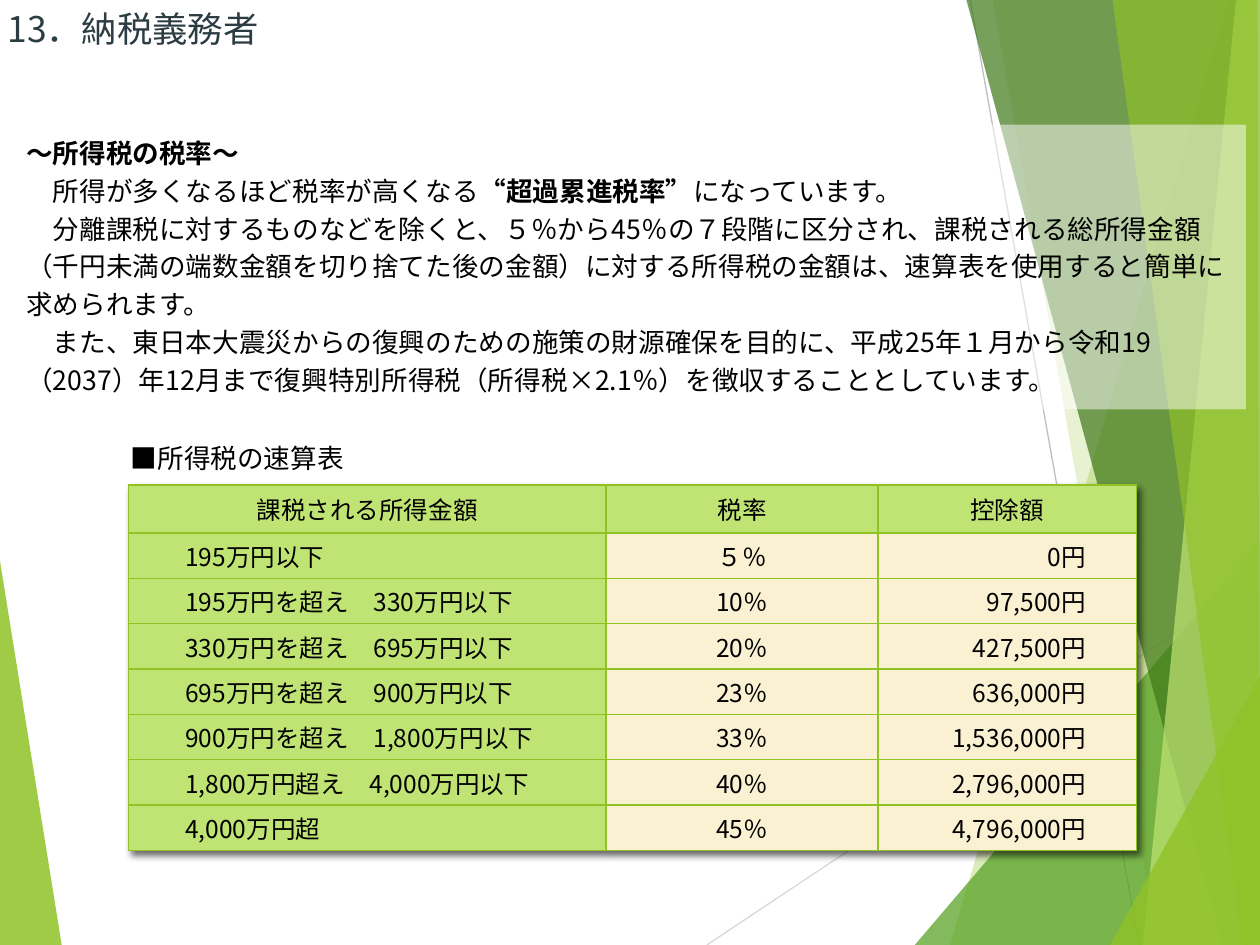
from pptx import Presentation
from pptx.dml.color import RGBColor
from pptx.enum.shapes import MSO_CONNECTOR as Link, MSO_SHAPE as Shape
from pptx.enum.text import MSO_ANCHOR as Anchor, PP_ALIGN as Align
from pptx.oxml import parse_xml
from pptx.oxml.ns import nsdecls, qn
from pptx.util import Inches, Pt
from lxml.etree import SubElement

FONT = "Noto Sans CJK JP"
GREEN, LIME, CREAM = "90C226", "C0E474", "FAF1D2"

# fill, opacity in percent, corners in inches
FACETS = [
    (GREEN, 30, [(9.75, 0), (7.54, 7.5), (10.02, 7.5), (10.01, 0)]),
    (GREEN, 20, [(7.88, 0), (9.19, 7.5), (10.01, 7.5), (10.01, 0)]),
    ("54A021", 72, [(7.26, 7.5), (10, 4.29), (10.01, 7.5)]),
    ("3F7819", 70, [(7.67, 0), (9.7, 7.5), (10.01, 7.5), (10.01, 0)]),
    (LIME, 70, [(9.81, 0), (9.07, 7.5), (10.01, 7.5), (10, 0)]),
    (GREEN, 65, [(8.83, 0), (9.86, 7.5), (10, 7.5), (9.98, 0)]),
    (GREEN, 80, [(8.81, 7.5), (10.01, 5.35), (10.01, 7.5)]),
]
LEFT_FACET = (GREEN, 85, [(-0.01, 4.39), (0.49, 7.5), (-0.01, 7.5)])

# paragraphs of (text, bold) runs
BODY = [
    [("～所得税の税率～", True)],
    [("　所得が多くなるほど税率が高くなる", False), ("“超過累進税率”", True),
     ("になっています。", False)],
    [("　分離課税に対するものなどを除くと、５％から45％の７段階に区分され、"
      "課税される総所得金額（千円未満の端数金額を切り捨てた後の金額）に対する"
      "所得税の金額は、速算表を使用すると簡単に求められます。", False)],
    [("　また、東日本大震災からの復興のための施策の財源確保を目的に、"
      "平成25年１月から令和19（2037）年12月まで復興特別所得税"
      "（所得税×2.1％）を徴収することとしています。", False)],
]
CAPTION = [[("■所得税の速算表", False)]]

RATES = [
    ("課税される所得金額", "税率", "控除額"),
    ("195万円以下", "５％", "0円"),
    ("195万円を超え　330万円以下", "10％", "97,500円"),
    ("330万円を超え　695万円以下", "20％", "427,500円"),
    ("695万円を超え　900万円以下", "23％", "636,000円"),
    ("900万円を超え　1,800万円以下", "33％", "1,536,000円"),
    ("1,800万円超え　4,000万円以下", "40％", "2,796,000円"),
    ("4,000万円超", "45％", "4,796,000円"),
]
WIDTHS = (3.79, 2.16, 2.05)
ALIGNS = (Align.LEFT, Align.CENTER, Align.RIGHT)
MARGINS = ((0.45, 0.06), (0.06, 0.06), (0.06, 0.4))


def rgb(code):
    return RGBColor.from_string(code)


def paint(shape, code, alpha):
    """Fill a shape without outline or shadow; alpha is opacity in percent."""
    shape.shadow.inherit = False
    shape.line.fill.background()
    shape.fill.solid()
    shape.fill.fore_color.rgb = rgb(code)
    tint = shape.fill._xPr.find(qn("a:solidFill"))[0]
    SubElement(tint, qn("a:alpha")).set("val", str(alpha * 1000))


def add_facet(slide, code, alpha, points):
    first, *rest = [(Inches(x), Inches(y)) for x, y in points]
    build = slide.shapes.build_freeform(*first)
    build.add_line_segments(rest)
    paint(build.convert_to_shape(), code, alpha)


def add_line(slide, start, end, code):
    ends = [Inches(v) for v in start + end]
    line = slide.shapes.add_connector(Link.STRAIGHT, *ends)
    line.line.color.rgb = rgb(code)
    line.line.width = Pt(0.75)
    SubElement(line._element.spPr, qn("a:effectLst"))


def add_run(para, text, size, code="000000", bold=False):
    run = para.add_run()
    run.text = text
    font = run.font
    font.size, font.bold, font.name = Pt(size), bold, FONT
    font.color.rgb = rgb(code)
    SubElement(font._element, qn("a:ea")).set("typeface", FONT)


def add_panel(slide, box, paras):
    """Half-clear white panel with left-aligned text."""
    panel = slide.shapes.add_shape(Shape.RECTANGLE, *map(Inches, box))
    paint(panel, "FFFFFF", 50)
    frame = panel.text_frame
    frame.word_wrap = True
    frame.vertical_anchor = Anchor.TOP
    for i, runs in enumerate(paras):
        para = frame.add_paragraph() if i else frame.paragraphs[0]
        para.alignment = Align.LEFT
        para.line_spacing = Pt(21.6)
        for text, bold in runs:
            add_run(para, text, 15.2, bold=bold)


def add_title(slide, text):
    box = slide.shapes.add_textbox(0, 0, Inches(4), Inches(0.45))
    frame = box.text_frame
    frame.word_wrap = True
    frame.vertical_anchor = Anchor.MIDDLE
    frame.margin_top = frame.margin_bottom = frame.margin_right = 0
    frame.margin_left = Inches(0.06)
    add_run(frame.paragraphs[0], text, 20.2, "2C3C43")


def fill_cell(cell, text, align, sides, code):
    props = cell._tc.get_or_add_tcPr()
    for side in "LRTB":
        props.append(parse_xml(
            f'<a:ln{side} {nsdecls("a")} w="12700"><a:solidFill>'
            f'<a:srgbClr val="{GREEN}"/></a:solidFill></a:ln{side}>'))
    cell.fill.solid()
    cell.fill.fore_color.rgb = rgb(code)
    cell.vertical_anchor = Anchor.MIDDLE
    cell.margin_left, cell.margin_right = map(Inches, sides)
    cell.margin_top = cell.margin_bottom = Inches(0.03)
    para = cell.text_frame.paragraphs[0]
    para.alignment = align
    add_run(para, text, 14)


def add_rates(slide):
    frame = slide.shapes.add_table(len(RATES), len(WIDTHS), Inches(1.02),
                                   Inches(3.85), Inches(8), Inches(2.88))
    table = frame.table
    table._tbl.tblPr.insert(0, parse_xml(
        f'<a:effectLst {nsdecls("a")}><a:outerShdw blurRad="50800" '
        'dist="38100" dir="2700000" algn="tl"><a:srgbClr val="000000">'
        '<a:alpha val="60000"/></a:srgbClr></a:outerShdw></a:effectLst>'))
    for col, width in zip(table.columns, WIDTHS):
        col.width = Inches(width)
    for r, row in enumerate(RATES):
        table.rows[r].height = Inches(0.36 if r else 0.38)
        for c, text in enumerate(row):
            align = ALIGNS[c] if r else Align.CENTER
            sides = MARGINS[c] if r else (0.06, 0.06)
            code = CREAM if r and c else LIME
            fill_cell(table.cell(r, c), text, align, sides, code)


def main():
    prs = Presentation()
    prs.slide_width, prs.slide_height = Inches(10), Inches(7.5)
    slide = prs.slides.add_slide(prs.slide_layouts[6])
    add_facet(slide, *LEFT_FACET)
    add_line(slide, (5.61, 7.5), (10.01, 4.57), "D9D9D9")
    add_line(slide, (7.7, 0), (9.04, 7.5), "BFBFBF")
    for facet in FACETS:
        add_facet(slide, *facet)
    add_panel(slide, (0.94, 3.41, 2.27, 0.41), CAPTION)
    add_panel(slide, (0.11, 0.99, 9.78, 2.26), BODY)
    add_rates(slide)
    add_title(slide, "13．納税義務者")
    prs.save("out.pptx")


if __name__ == "__main__":
    main()
